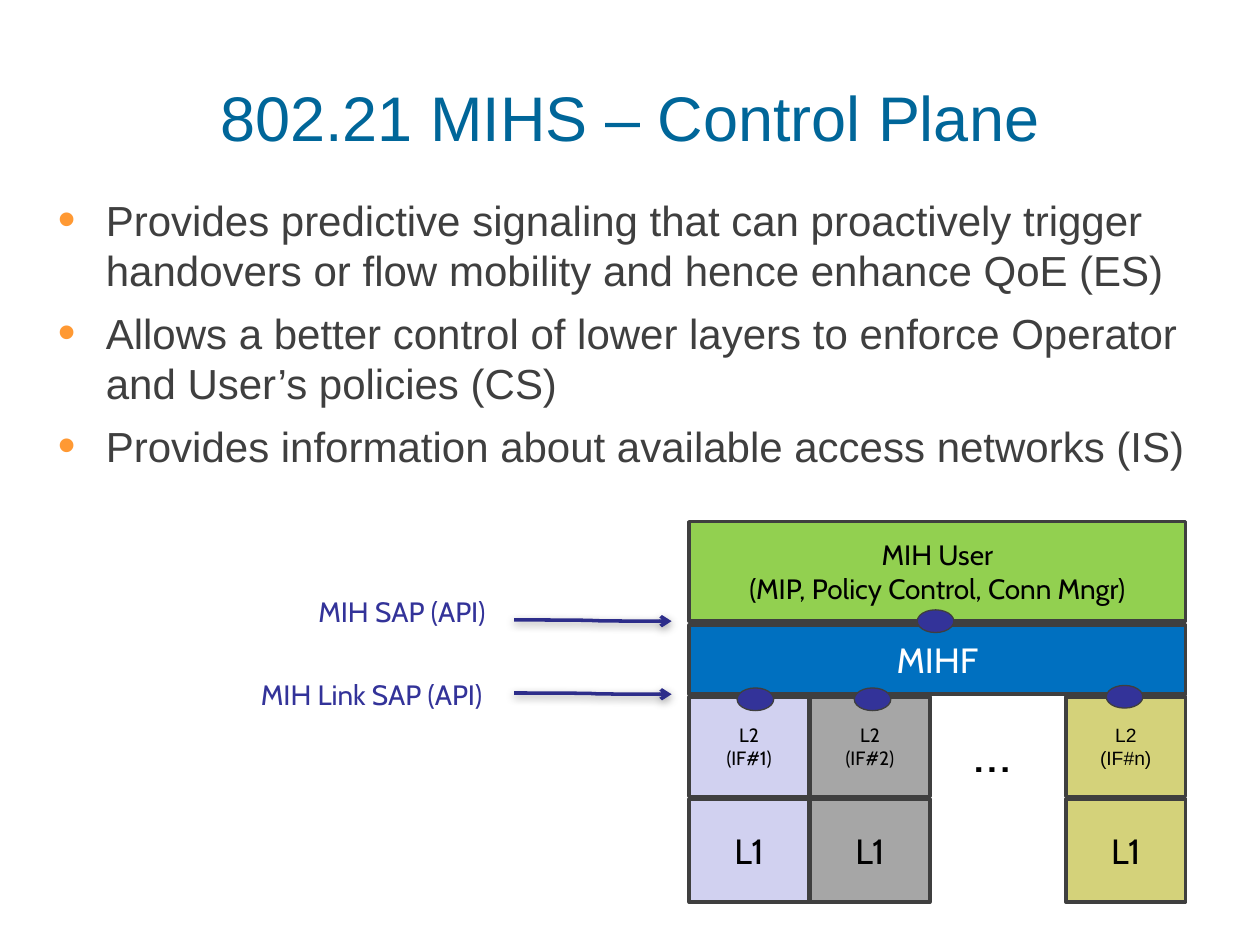
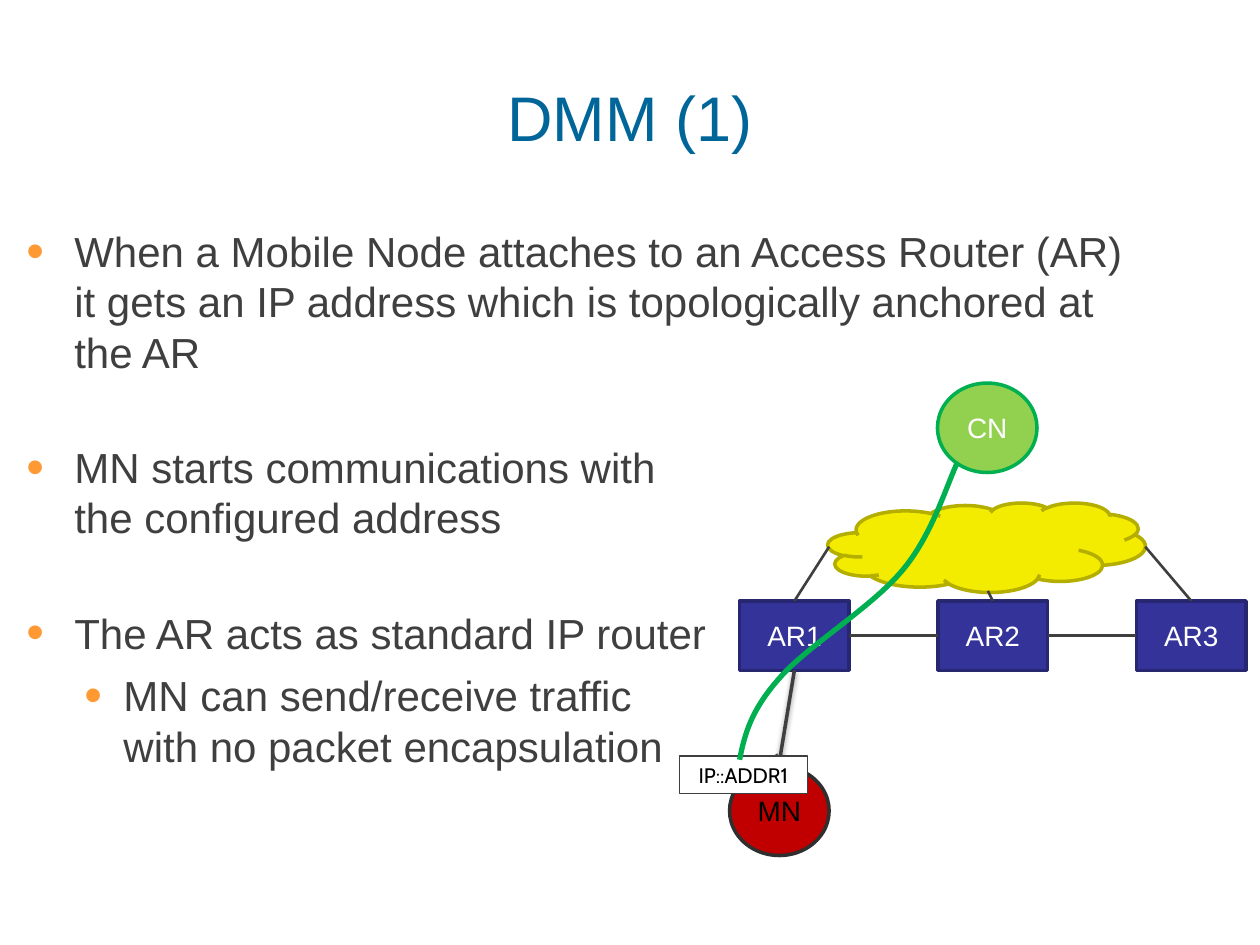
from dataclasses import dataclass

from lxml.etree import SubElement
from pptx import Presentation
from pptx.dml.color import RGBColor
from pptx.enum.shapes import MSO_CONNECTOR as Link, MSO_SHAPE as Shape
from pptx.enum.text import MSO_ANCHOR as Anchor, PP_ALIGN as Align
from pptx.oxml.ns import qn
from pptx.util import Inches, Pt


@dataclass(frozen=True)
class Theme:
    title: str = "006699"
    body: str = "3F3F3F"
    bullet: str = "FF9933"
    navy: str = "333399"
    navy_edge: str = "262671"
    arrow: str = "2D2D8A"
    blue: str = "0070C0"
    lime: str = "92D050"
    green: str = "00B050"
    lavender: str = "D1D1F0"
    gray: str = "A6A6A6"
    khaki: str = "D4D27A"
    yellow: str = "F3EB00"
    yellow_edge: str = "B4AE00"
    red: str = "C00000"
    red_edge: str = "2F2F2F"
    black: str = "000000"
    white: str = "FFFFFF"
    sans: str = "Arial"
    label_font: str = "Cabin"
    title_size: int = 36
    body_size: int = 24
    dots_size: int = 32
    layer_size: int = 20
    label_size: int = 16
    address_size: int = 12
    small_size: int = 11


THEME = Theme()
WIDTH, HEIGHT = 10, 7.5

# Content: bullets are (level, space before in points, text)
CONTROL_TITLE = "802.21 MIHS – Control Plane"
CONTROL_BULLETS = [
    (0, 7, "Provides predictive signaling that can proactively trigger "
           "handovers or flow mobility and hence enhance QoE (ES)"),
    (0, 7, "Allows a better control of lower layers to enforce Operator "
           "and User’s policies (CS)"),
    (0, 7, "Provides information about available access networks (IS)"),
]
# Interface: name, fill, font, left offset in the stack
INTERFACES = [
    ("IF#1", THEME.lavender, THEME.label_font, 0),
    ("IF#2", THEME.gray, THEME.label_font, 0.96),
    ("IF#n", THEME.khaki, THEME.sans, 2.99),
]
# Access point: label, box, arrow height
ACCESS_POINTS = [
    ("MIH SAP (API)", (1.58, 4.67, 3.22, 0.37), 4.92),
    ("MIH Link SAP (API)", (1, 5.33, 3.9, 0.37), 5.5),
]
ACCESS_DOTS = [(7.28, 4.84), (5.85, 5.46), (6.78, 5.46), (8.78, 5.44)]

DMM_TITLE = "DMM (1)"
DMM_BULLETS = [
    (0, 7, "When a Mobile Node attaches to an Access Router (AR) it gets "
           "an IP address which is topologically anchored at the AR"),
    (0, 37, "MN starts communications with\vthe configured address"),
    (0, 37, "The AR acts as standard IP router"),
    (1, 7, "MN can send/receive traffic\vwith no packet encapsulation"),
]
ROUTERS = ["AR1", "AR2", "AR3"]
# Node: label, left, top, fill, edge, text colour
NODES = [
    ("MN", 5.79, 6.08, THEME.red, THEME.red_edge, THEME.black),
    ("CN", 7.44, 3.04, THEME.lime, THEME.green, THEME.white),
]
# Bezier control points of the traffic flow; neighbours share an end point
FLOW = [(5.87, 6.03), (5.91, 5.83), (5.96, 5.64), (6.18, 5.39),
        (6.39, 5.14), (6.92, 4.82), (7.16, 4.53),
        (7.4, 4.25), (7.52, 3.83), (7.6, 3.67)]
INDENTS = [(0.38, -0.38), (0.77, -0.31)]


def rgb(color):
    return RGBColor.from_string(color)


def write(shape, text, size, color, font=THEME.sans, align=Align.CENTER,
          anchor=Anchor.MIDDLE, wrap=True, inset=None):
    frame = shape.text_frame
    frame.text = text
    frame.word_wrap = wrap
    frame.vertical_anchor = anchor
    if inset is not None:
        frame.margin_left = frame.margin_right = Inches(inset)
        frame.margin_top = frame.margin_bottom = Inches(inset)
    for paragraph in frame.paragraphs:
        paragraph.alignment = align
        for run in paragraph.runs:
            run.font.size = Pt(size)
            run.font.name = font
            run.font.color.rgb = rgb(color)
    return frame


def add_text(slide, box, text, size, color, **options):
    shape = slide.shapes.add_textbox(*map(Inches, box))
    return write(shape, text, size, color, **options)


def add_block(slide, kind, box, fill, edge=THEME.body, weight=2):
    shape = slide.shapes.add_shape(kind, *map(Inches, box))
    shape.shadow.inherit = False
    shape.fill.solid()
    shape.fill.fore_color.rgb = rgb(fill)
    shape.line.color.rgb = rgb(edge)
    shape.line.width = Pt(weight)
    return shape


def add_link(slide, start, end, color=THEME.body, weight=1.5,
             kind=Link.STRAIGHT, arrow=False, blur=5):
    link = slide.shapes.add_connector(kind, *map(Inches, start + end))
    link.line.color.rgb = rgb(color)
    link.line.width = Pt(weight)
    properties = link._element.spPr
    if arrow:
        SubElement(properties.find(qn("a:ln")), qn("a:tailEnd"), type="arrow")
    effects = SubElement(properties, qn("a:effectLst"))
    if arrow:
        shadow = SubElement(effects, qn("a:outerShdw"), blurRad=str(Pt(blur)),
                            dist=str(Pt(1.6)), dir="5400000", rotWithShape="0")
        tint = SubElement(shadow, qn("a:srgbClr"), val=THEME.black)
        SubElement(tint, qn("a:alpha"), val="38000")


def add_bullets(slide, box, bullets):
    text = "\n".join(words for _, _, words in bullets)
    frame = add_text(slide, box, text, THEME.body_size, THEME.body,
                     align=Align.LEFT, anchor=Anchor.TOP, inset=0.04)
    for paragraph, (level, space, _) in zip(frame.paragraphs, bullets):
        paragraph.level = level
        paragraph.space_before = Pt(space)
        properties = paragraph._p.get_or_add_pPr()
        margin, indent = INDENTS[level]
        properties.set("marL", str(Inches(margin)))
        properties.set("indent", str(Inches(indent)))
        color = SubElement(properties, qn("a:buClr"))
        SubElement(color, qn("a:srgbClr"), val=THEME.bullet)
        SubElement(properties, qn("a:buSzPct"), val="120000")
        SubElement(properties, qn("a:buFont"), typeface=THEME.sans)
        SubElement(properties, qn("a:buChar"), char="•")


def new_slide(presentation, title, body_box, bullets):
    slide = presentation.slides.add_slide(presentation.slide_layouts[6])
    add_text(slide, (0.05 * WIDTH, 0.1, 0.9 * WIDTH, 1.65), title,
             THEME.title_size, THEME.title, inset=0.04)
    add_bullets(slide, body_box, bullets)
    return slide


def build_control_plane(presentation):
    slide = new_slide(presentation, CONTROL_TITLE, (0.42, 1.5, 9.08, 5.75),
                      CONTROL_BULLETS)
    left, width, column = 5.47, 3.94, 0.95

    # Protocol stack: shared layers, then one column per interface
    layers = [
        ("MIHF", (left, 4.96, width, 0.55), THEME.blue, THEME.layer_size,
         THEME.white, THEME.label_font),
        ("MIH User\n(MIP, Policy Control, Conn Mngr)",
         (left, 4.14, width, 0.79), THEME.lime, THEME.label_size,
         THEME.black, THEME.label_font),
    ]
    for name, fill, font, offset in INTERFACES:
        layers += [
            (f"L2\v({name})", (left + offset, 5.53, column, 0.79), fill,
             THEME.small_size, THEME.black, font),
            ("L1", (left + offset, 6.34, column, 0.82), fill,
             THEME.layer_size, THEME.black, THEME.label_font),
        ]
    for text, box, fill, size, color, font in layers:
        block = add_block(slide, Shape.RECTANGLE, box, fill)
        write(block, text, size, color, font=font, wrap=False)
    add_text(slide, (7.63, 5.75, 0.45, 0.4), "…", THEME.dots_size,
             THEME.black, font=THEME.label_font, wrap=False)

    # Service access points
    for text, box, top in ACCESS_POINTS:
        add_link(slide, (4.08, top), (5.33, top + 0.01), THEME.arrow, 2,
                 kind=Link.CURVE, arrow=True)
        add_text(slide, box, text, THEME.label_size, THEME.navy,
                 font=THEME.label_font, anchor=Anchor.TOP)
    for x, y in ACCESS_DOTS:
        add_block(slide, Shape.OVAL, (x, y, 0.29, 0.18), THEME.navy,
                  weight=0.75)


def bezier(points, steps=16):
    yield points[0]
    for first in range(0, len(points) - 1, 3):
        section = points[first:first + 4]
        for step in range(1, steps + 1):
            t = step / steps
            shares = ((1 - t) ** 3, 3 * t * (1 - t) ** 2,
                      3 * t ** 2 * (1 - t), t ** 3)
            yield tuple(sum(share * point[axis]
                            for share, point in zip(shares, section))
                        for axis in (0, 1))


def add_flow(slide):
    start, *rest = [(Inches(x), Inches(y)) for x, y in bezier(FLOW)]
    builder = slide.shapes.build_freeform(*start)
    builder.add_line_segments(rest, close=False)
    flow = builder.convert_to_shape()
    flow.shadow.inherit = False
    flow.fill.background()
    flow.line.color.rgb = rgb(THEME.green)
    flow.line.width = Pt(3)


def build_dmm(presentation):
    slide = new_slide(presentation, DMM_TITLE, (0.17, 1.75, 9, 5.75),
                      DMM_BULLETS)
    top, width, height, pitch = 4.77, 0.87, 0.55, 1.575
    lefts = [5.87 + pitch * index for index in range(len(ROUTERS))]
    centers = [left + width / 2 for left in lefts]

    # Cloud, routers and end nodes
    add_block(slide, Shape.CLOUD, (6.57, 3.99, 2.52, 0.71), THEME.yellow,
              THEME.yellow_edge)
    for name, left in zip(ROUTERS, lefts):
        router = add_block(slide, Shape.RECTANGLE, (left, top, width, height),
                           THEME.navy, THEME.navy_edge)
        write(router, name, THEME.label_size, THEME.white)
    for name, x, y, fill, edge, color in NODES:
        node = add_block(slide, Shape.OVAL, (x, y, 0.79, 0.71), fill, edge)
        write(node, name, THEME.label_size, color)

    # Mobile node attachment and its address
    add_link(slide, (centers[0], top + height), (6.18, 6.08), weight=2,
             arrow=True, blur=3.1)
    address = add_block(slide, Shape.RECTANGLE, (5.39, 6, 1.02, 0.3),
                        THEME.white, weight=0.75)
    write(address, "IP::ADDR1", THEME.address_size, THEME.black,
          font=THEME.label_font)
    add_flow(slide)

    # Links between routers, and from each router to the cloud
    middle = top + height / 2
    for left, following in zip(lefts, lefts[1:]):
        add_link(slide, (left + width, middle), (following, middle))
    for center, port in zip(centers, [(6.58, 4.34), (7.84, 4.69), (9.09, 4.34)]):
        add_link(slide, (center, top), port)


def main():
    presentation = Presentation()
    presentation.slide_width = Inches(WIDTH)
    presentation.slide_height = Inches(HEIGHT)
    build_control_plane(presentation)
    build_dmm(presentation)
    presentation.save("out.pptx")


if __name__ == "__main__":
    main()
